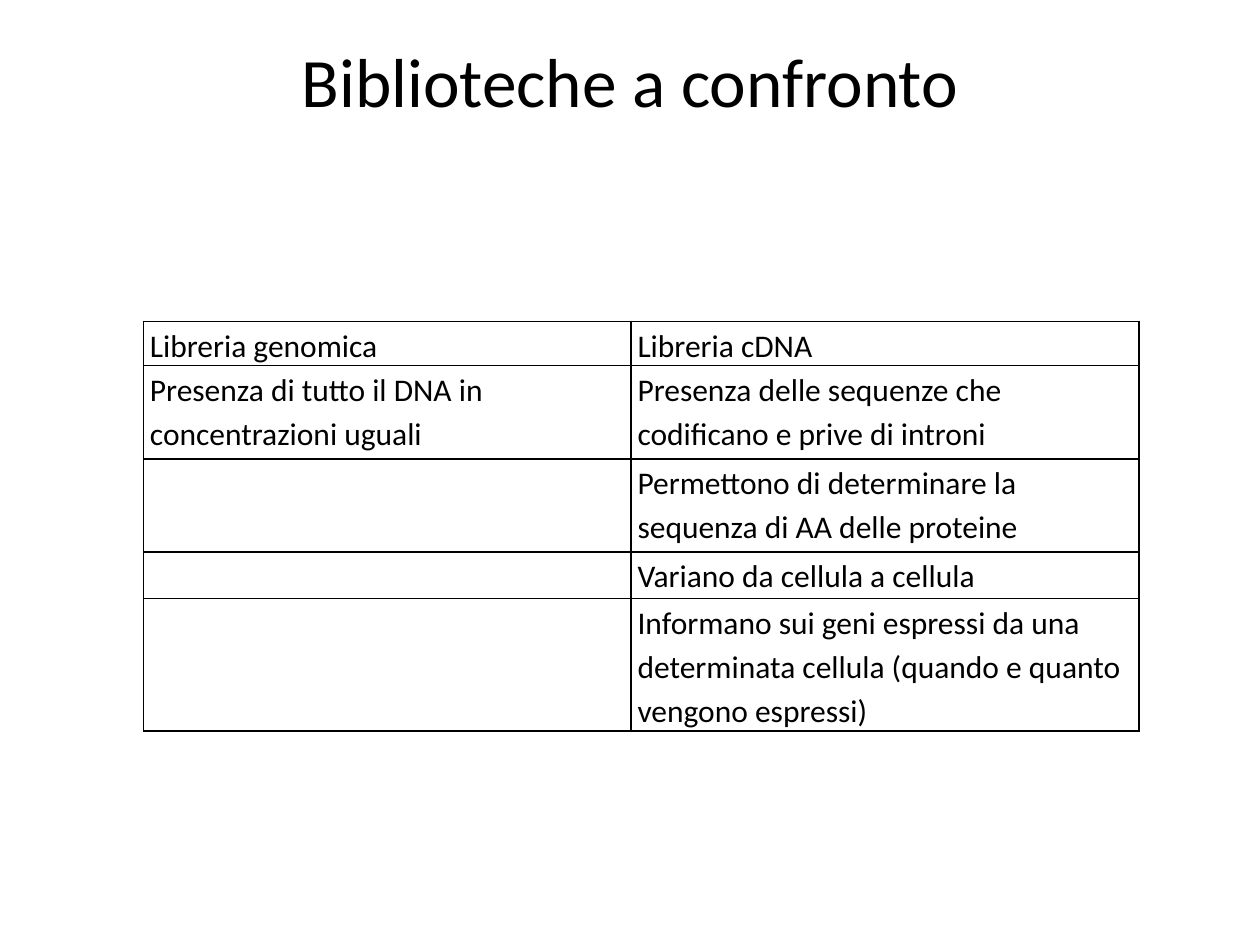
from lxml import etree
from pptx import Presentation
from pptx.dml.color import RGBColor
from pptx.enum.text import MSO_ANCHOR, PP_ALIGN
from pptx.oxml.ns import qn
from pptx.util import Inches, Pt

BLACK = RGBColor(0x00, 0x00, 0x00)
FONT = "Calibri"
TOP, CENTER, LEFT = MSO_ANCHOR.TOP, PP_ALIGN.CENTER, PP_ALIGN.LEFT
TITLE_ONLY = 5

COL_WIDTHS = (3.87, 4.03)
ROW_HEIGHTS = (0.35, 0.74, 0.74, 0.37, 1.05)
ROWS = (
    ("Libreria genomica", "Libreria cDNA"),
    ("Presenza di tutto il DNA in concentrazioni uguali",
     "Presenza delle sequenze che codificano e prive di introni"),
    ("", "Permettono di determinare la sequenza di AA delle proteine"),
    ("", "Variano da cellula a cellula"),
    ("", "Informano sui geni espressi da una determinata cellula "
         "(quando e quanto vengono espressi)"),
)


def write(p, text, size, align):
    p.alignment = align
    r = p.add_run()
    r.text = text
    r.font.name, r.font.size = FONT, Pt(size)
    r.font.color.rgb = BLACK


def border_cell(cell, width=1):
    """Outline the four sides of a cell; lines come before the fill."""
    tc_pr = cell._tc.get_or_add_tcPr()
    for i, side in enumerate(("a:lnL", "a:lnR", "a:lnT", "a:lnB")):
        ln = etree.Element(qn(side), w=str(Pt(width)))
        fill = etree.SubElement(ln, qn("a:solidFill"))
        etree.SubElement(fill, qn("a:srgbClr"), val=str(BLACK))
        tc_pr.insert(i, ln)


def add_title(slide, text, x, y, w, h):
    sp = slide.shapes.title
    sp.left, sp.top, sp.width, sp.height = map(Inches, (x, y, w, h))
    tf = sp.text_frame
    tf.word_wrap = True
    tf.vertical_anchor = TOP
    tf.margin_top = 0
    write(tf.paragraphs[0], text, 39.6, CENTER)


def add_comparison(slide, x, y):
    box = map(Inches, (x, y, sum(COL_WIDTHS), sum(ROW_HEIGHTS)))
    table = slide.shapes.add_table(len(ROWS), len(COL_WIDTHS), *box).table
    table.first_row = table.horz_banding = False
    for col, width in zip(table.columns, COL_WIDTHS):
        col.width = Inches(width)
    for row, height, texts in zip(table.rows, ROW_HEIGHTS, ROWS):
        row.height = Inches(height)
        for cell, text in zip(row.cells, texts):
            cell.margin_left = cell.margin_right = Inches(0.05)
            cell.margin_top = cell.margin_bottom = 0
            cell.vertical_anchor = TOP
            cell.fill.background()
            border_cell(cell)
            if text:
                p = cell.text_frame.paragraphs[0]
                p.line_spacing = 1.15
                write(p, text, 18, LEFT)


def main():
    prs = Presentation()
    prs.slide_width, prs.slide_height = Inches(10), Inches(7.5)
    slide = prs.slides.add_slide(prs.slide_layouts[TITLE_ONLY])
    # Title
    add_title(slide, "Biblioteche a confronto", 0.5, 0.3, 9, 1.25)
    # Comparison table
    add_comparison(slide, 1.14, 2.55)
    prs.save("out.pptx")


if __name__ == "__main__":
    main()
